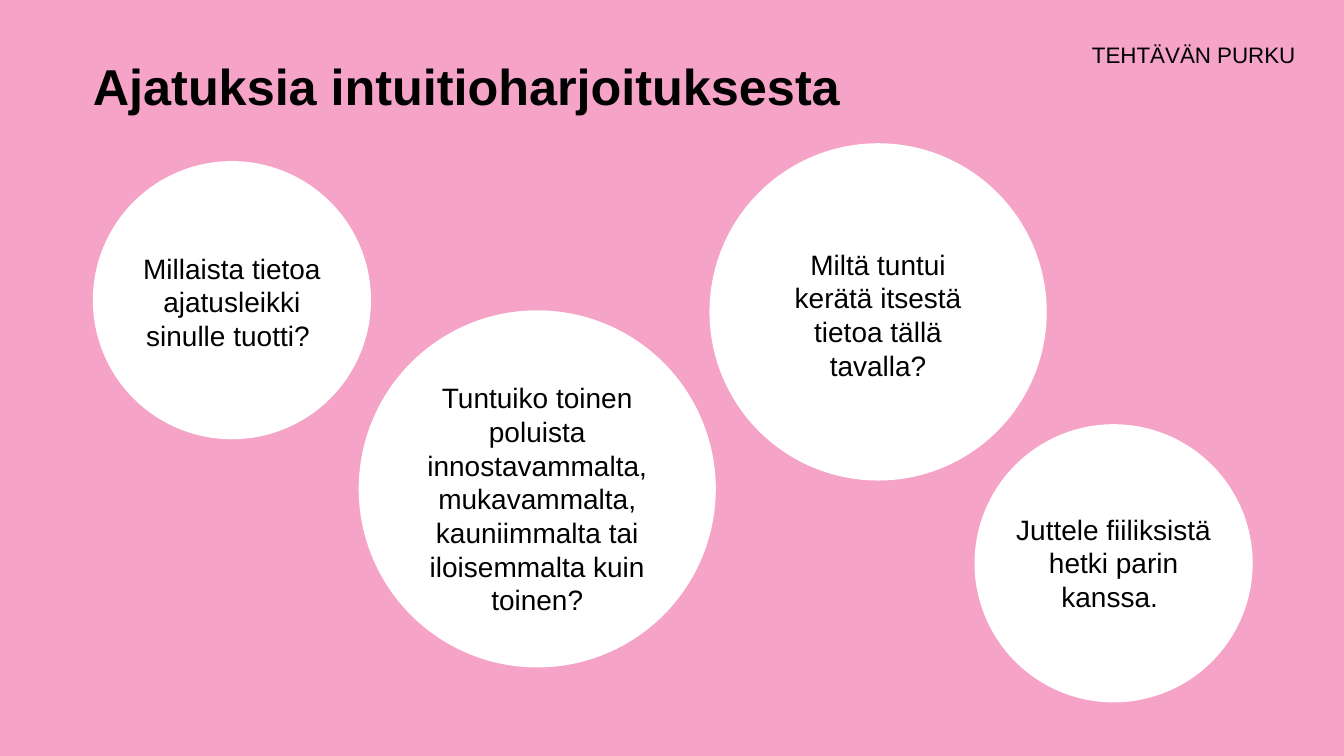
from pptx import Presentation
from pptx.dml.color import RGBColor
from pptx.enum import shapes, text
from pptx.util import Cm, Pt

PINK, WHITE, BLACK = "F5A3C7", "FFFFFF", "000000"


def paint(fill, colour):
    fill.solid()
    fill.fore_color.rgb = RGBColor.from_string(colour)


def write(shape, words, size=20, bold=False, align=text.PP_ALIGN.CENTER,
          anchor=text.MSO_ANCHOR.TOP, insets=(0.25, 0.13, 0.25, 0.13),
          fit=text.MSO_AUTO_SIZE.NONE):
    """Fill a shape with one paragraph; insets are left, top, right, bottom in cm."""
    frame = shape.text_frame
    frame.word_wrap = True
    frame.auto_size = fit
    frame.vertical_anchor = anchor
    (frame.margin_left, frame.margin_top,
     frame.margin_right, frame.margin_bottom) = map(Cm, insets)
    paragraph = frame.paragraphs[0]
    paragraph.alignment = align
    run = paragraph.add_run()
    run.text = words
    run.font.name, run.font.size, run.font.bold = "Arial", Pt(size), bold
    paint(run.font.fill, BLACK)


deck = Presentation()
deck.slide_width, deck.slide_height = Cm(33.87), Cm(19.05)
slide = deck.slides.add_slide(deck.slide_layouts[5])
paint(slide.background.fill, PINK)

section = slide.shapes.add_shape(shapes.MSO_SHAPE.RECTANGLE,
                                 Cm(23.93), Cm(0.91), Cm(9.02), Cm(0.94))
section.shadow.inherit = False
paint(section.fill, PINK)
section.line.fill.background()
write(section, "TEHTÄVÄN PURKU", size=16, align=text.PP_ALIGN.RIGHT,
      anchor=text.MSO_ANCHOR.MIDDLE, insets=(0, 0, 0.3, 0))

heading = slide.shapes.title
heading.left, heading.top, heading.width, heading.height = map(
    Cm, (2.34, 0.03, 29.21, 4.22))
write(heading, "Ajatuksia intuitioharjoituksesta", size=36, bold=True,
      align=text.PP_ALIGN.LEFT, anchor=text.MSO_ANCHOR.MIDDLE, insets=(0, 0, 0, 0))

# circle left, top, diameter; question top, width, height; wording
bubbles = [
    (2.34, 4.06, 7.01, 6.2, 5.51, 2.82,
     "Millaista tietoa ajatusleikki sinulle tuotti? "),
    (9.04, 7.82, 9, 9.47, 6.1, 6.25,
     "Tuntuiko toinen poluista innostavammalta, mukavammalta, "
     "kauniimmalta tai iloisemmalta kuin toinen?"),
    (17.88, 3.61, 8.5, 6.1, 4.9, 3.68,
     "Miltä tuntui kerätä itsestä tietoa tällä tavalla?"),
    (24.56, 10.69, 7.01, 12.78, 5.51, 2.82,
     "Juttele fiiliksistä hetki parin kanssa. "),
]
for left, top, diameter, question_top, width, height, words in bubbles:
    circle = slide.shapes.add_shape(shapes.MSO_SHAPE.FLOWCHART_CONNECTOR,
                                    Cm(left), Cm(top), Cm(diameter), Cm(diameter))
    circle.shadow.inherit = False
    paint(circle.fill, WHITE)
    circle.line.fill.background()
    question = slide.shapes.add_textbox(Cm(left + (diameter - width) / 2),
                                        Cm(question_top), Cm(width), Cm(height))
    write(question, words, fit=text.MSO_AUTO_SIZE.SHAPE_TO_FIT_TEXT)

deck.save("out.pptx")
